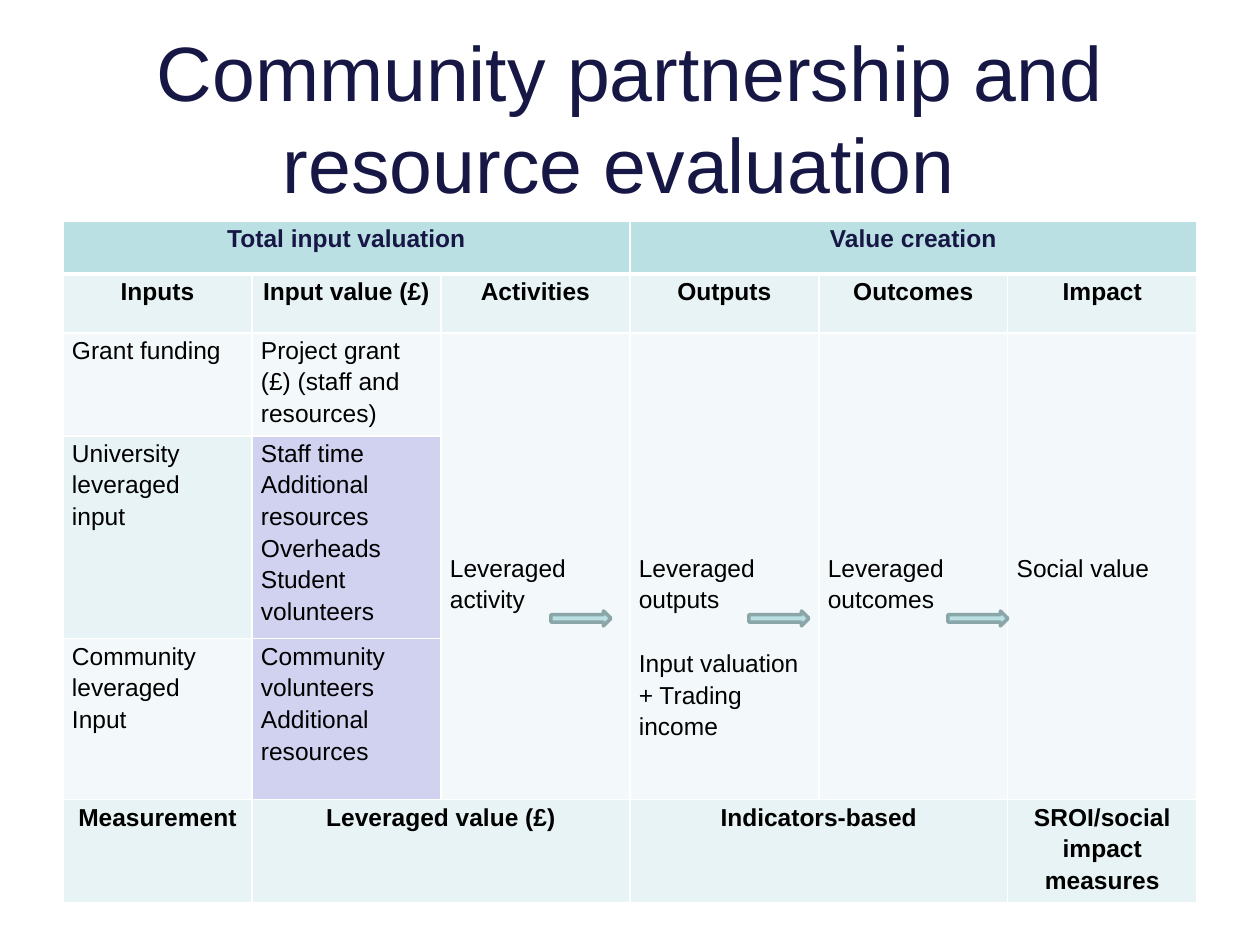
from lxml.etree import SubElement
from pptx import Presentation
from pptx.dml.color import RGBColor
from pptx.enum.shapes import MSO_SHAPE as Shape
from pptx.enum.text import MSO_ANCHOR as Anchor, PP_ALIGN as Align
from pptx.oxml.ns import qn
from pptx.util import Pt

PX = 914400 // 126
FONT = "Arial"
COLORS = {
    "navy": "171745", "black": "000000", "white": "FFFFFF", "teal": "BBE0E3",
    "tint": "E7F3F4", "pale": "F3F9FA", "lilac": "D1D1F0", "edge": "8AA6A8",
}
TITLE = "Community partnership and resource evaluation "
TITLE_BOX = (63, 38, 1134, 157)
TABLE_LEFT, TABLE_TOP, COLUMN_WIDTH = 63, 221, 189
ROW_HEIGHTS = [53, 59, 103, 190, 161, 103]
LINE_GAP = 32
STAGE_DROP = 218
ARROW_LEFTS = [551, 749, 948]
ARROW_TOP, ARROW_WIDTH, ARROW_HEIGHT = 611, 60, 15

# Cell styles: fill, text colour, bold, alignment, top margin
STYLES = {
    "band": ("teal", "navy", True, Align.CENTER, 0),
    "head": ("tint", "black", True, Align.CENTER, 0),
    "pale": ("pale", "black", False, Align.LEFT, 0),
    "tint": ("tint", "black", False, Align.LEFT, 0),
    "value": ("lilac", "black", False, Align.LEFT, 0),
    "stage": ("pale", "black", False, Align.LEFT, STAGE_DROP),
}
# Cells: row, column, rows spanned, columns spanned, style, paragraphs
CELLS = [
    (0, 0, 1, 3, "band", ["Total input valuation"]),
    (0, 3, 1, 3, "band", ["Value creation"]),
    *[(1, column, 1, 1, "head", [label]) for column, label in enumerate(
        ["Inputs", "Input value (£)", "Activities", "Outputs", "Outcomes", "Impact"])],
    (2, 0, 1, 1, "pale", ["Grant funding"]),
    (2, 1, 1, 1, "pale", ["Project grant (£) (staff and resources)"]),
    (2, 2, 3, 1, "stage", ["Leveraged activity"]),
    (2, 3, 3, 1, "stage", ["Leveraged outputs", "Input valuation + Trading income"]),
    (2, 4, 3, 1, "stage", ["Leveraged outcomes"]),
    (2, 5, 3, 1, "stage", ["Social value"]),
    (3, 0, 1, 1, "tint", ["University leveraged", "input"]),
    (3, 1, 1, 1, "value", ["Staff time Additional resources Overheads", "Student volunteers"]),
    (4, 0, 1, 1, "pale", ["Community leveraged", "Input"]),
    (4, 1, 1, 1, "value", ["Community volunteers Additional resources"]),
    (5, 0, 1, 1, "head", ["Measurement"]),
    (5, 1, 1, 2, "head", ["Leveraged value (£)"]),
    (5, 3, 1, 2, "head", ["Indicators-based"]),
    (5, 5, 1, 1, "head", ["SROI/social impact measures"]),
]


def rgb(name):
    return RGBColor.from_string(COLORS[name])


def px(*lengths):
    return [length * PX for length in lengths]


def add_span(para, text, size, color, bold=False):
    span = para.add_run()
    span.text = text
    for name, value in {"name": FONT, "size": Pt(size), "bold": bold}.items():
        setattr(span.font, name, value)
    span.font.color.rgb = rgb(color)


def set_borders(cell, row):
    """White lines, thicker on both sides of the edge below the top band."""
    properties = cell._tc.get_or_add_tcPr()
    thick = {(0, "lnB"), (1, "lnT")}
    for index, side in enumerate(("lnL", "lnR", "lnT", "lnB")):
        line = SubElement(properties, qn("a:" + side))
        line.set("w", str(Pt(3 if (row, side) in thick else 1)))
        fill = SubElement(line, qn("a:solidFill"))
        SubElement(fill, qn("a:srgbClr")).set("val", COLORS["white"])
        properties.insert(index, line)


def add_title(page):
    box = page.shapes.add_textbox(*px(*TITLE_BOX))
    frame = box.text_frame
    frame.word_wrap = True
    frame.vertical_anchor = Anchor.MIDDLE
    para = frame.paragraphs[0]
    para.alignment = Align.CENTER
    add_span(para, TITLE, 44, "navy")


def fill_cell(cell, style, texts):
    fill, color, bold, alignment, drop = STYLES[style]
    cell.fill.solid()
    cell.fill.fore_color.rgb = rgb(fill)
    margins = {"left": 9, "right": 9, "top": drop, "bottom": 0}
    for side, length in margins.items():
        setattr(cell, "margin_" + side, length * PX)
    for index, text in enumerate(texts):
        frame = cell.text_frame
        para = frame.add_paragraph() if index else frame.paragraphs[0]
        para.alignment = alignment
        para.line_spacing = 1.15
        if index and style == "stage":
            para.space_before = LINE_GAP * PX
        add_span(para, text, 14, color, bold)


def add_matrix(page):
    columns = 6
    table = page.shapes.add_table(len(ROW_HEIGHTS), columns, *px(
        TABLE_LEFT, TABLE_TOP, COLUMN_WIDTH * columns, sum(ROW_HEIGHTS))).table
    for column in table.columns:
        column.width = COLUMN_WIDTH * PX
    for index, height in enumerate(ROW_HEIGHTS):
        table.rows[index].height = height * PX
        for column in range(columns):
            set_borders(table.cell(index, column), index)
    for row, column, down, across, style, texts in CELLS:
        cell = table.cell(row, column)
        if down * across > 1:
            cell.merge(table.cell(row + down - 1, column + across - 1))
        fill_cell(cell, style, texts)


def add_arrows(page):
    for left in ARROW_LEFTS:
        arrow = page.shapes.add_shape(
            Shape.RIGHT_ARROW, *px(left, ARROW_TOP, ARROW_WIDTH, ARROW_HEIGHT))
        arrow.shadow.inherit = False
        arrow.fill.solid()
        arrow.fill.fore_color.rgb = rgb("teal")
        arrow.line.color.rgb = rgb("edge")
        arrow.line.width = Pt(2)


def main():
    deck = Presentation()
    deck.slide_width, deck.slide_height = px(1260, 945)
    page = deck.slides.add_slide(deck.slide_layouts[6])
    add_title(page)
    add_matrix(page)
    add_arrows(page)
    deck.save("out.pptx")


if __name__ == "__main__":
    main()
